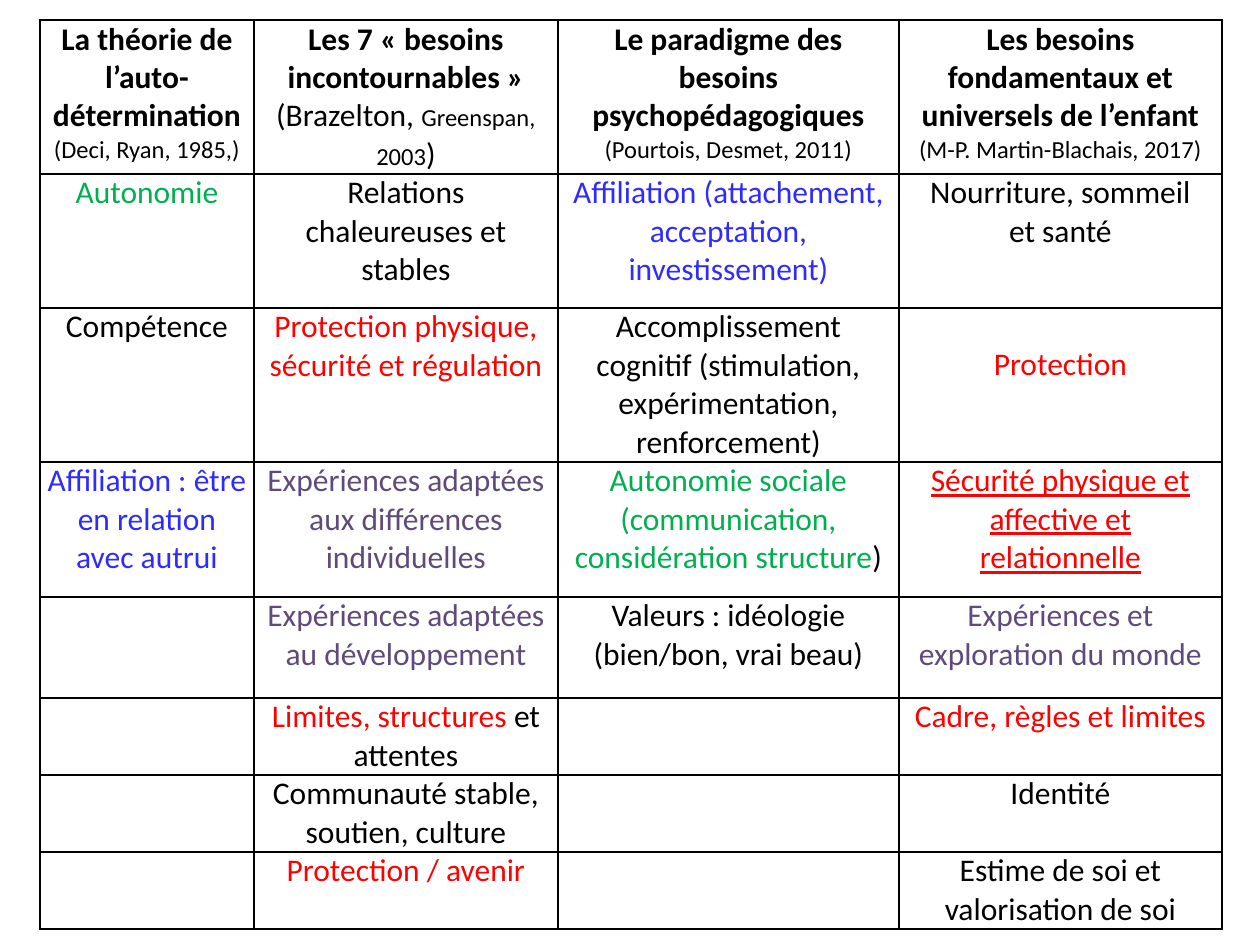
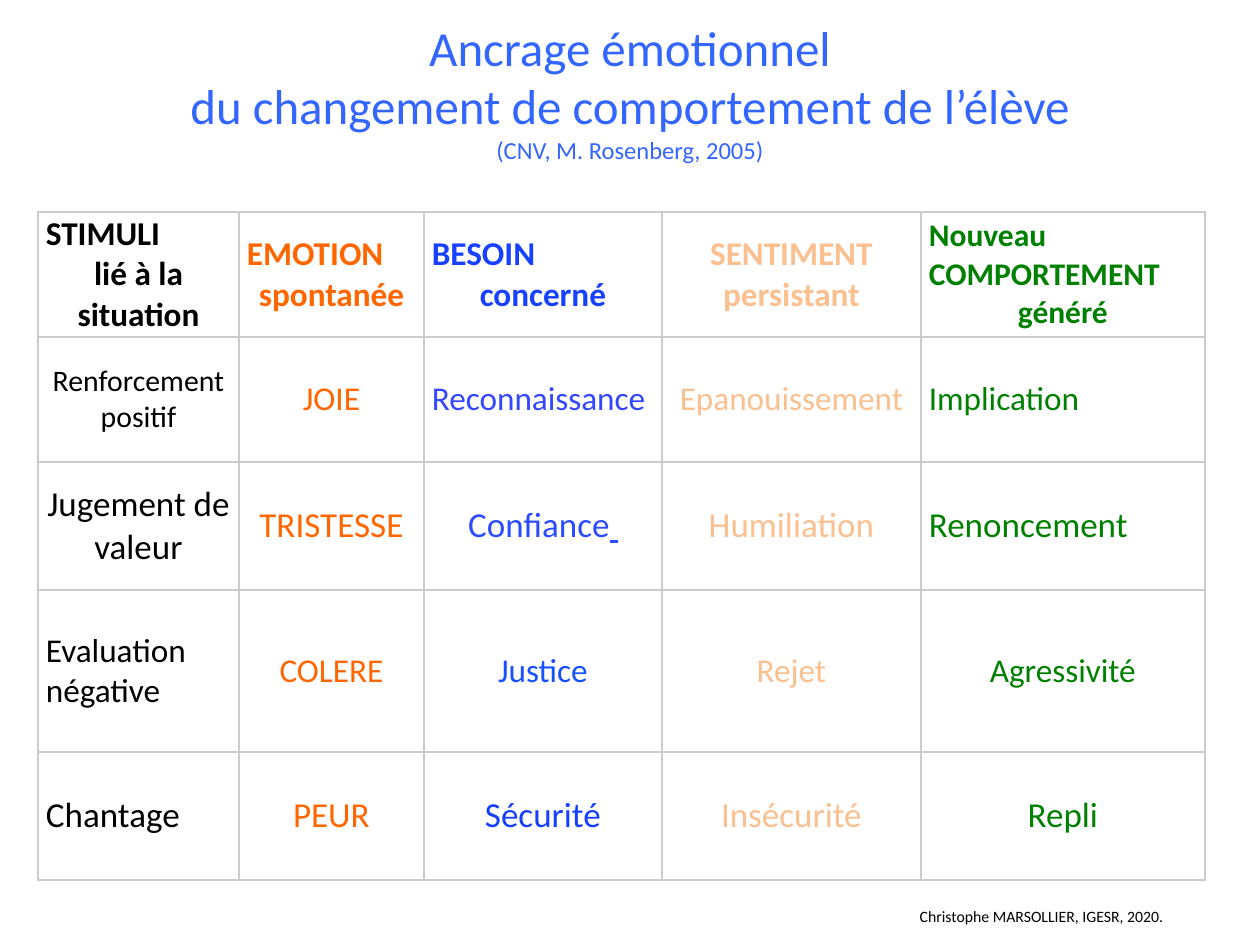
from lxml import etree
from pptx import Presentation
from pptx.dml.color import RGBColor
from pptx.enum import text
from pptx.oxml import ns
from pptx.util import Emu, Pt

PIXELS_PER_INCH = 126
SCALE = 914400 / PIXELS_PER_INCH
FONT = "Calibri"

BLACK = RGBColor(0x00, 0x00, 0x00)
AUTONOMY_GREEN = RGBColor(0x00, 0xB0, 0x50)
AFFILIATION_BLUE = RGBColor(0x2E, 0x2B, 0xFF)
SAFETY_RED = RGBColor(0xFF, 0x00, 0x00)
EXPERIENCE_PURPLE = RGBColor(0x60, 0x4A, 0x7B)
TITLE_BLUE = RGBColor(0x33, 0x66, 0xFF)
EMOTION_ORANGE = RGBColor(0xFF, 0x66, 0x00)
FEELING_PEACH = RGBColor(0xFA, 0xC0, 0x90)
BEHAVIOUR_GREEN = RGBColor(0x00, 0x80, 0x00)
NEED_BLUES = [
    RGBColor(0x18, 0x40, 0xFF),
    RGBColor(0x33, 0x47, 0xFF),
    RGBColor(0x2B, 0x4B, 0xFF),
    RGBColor(0x17, 0x51, 0xFF),
    RGBColor(0x15, 0x3F, 0xFB),
]
GRID_GREY = RGBColor(0xCB, 0xCB, 0xCB)

LEFT = text.PP_ALIGN.LEFT
CENTER = text.PP_ALIGN.CENTER
RIGHT = text.PP_ALIGN.RIGHT
TOP = text.MSO_ANCHOR.TOP
MIDDLE = text.MSO_ANCHOR.MIDDLE


def px(length):
    return Emu(round(length * SCALE))


def run(words, color=BLACK, size=18, **styles):
    return words, color, {"name": FONT, "size": Pt(size), "bold": False, **styles}


def line(*runs, align=CENTER):
    return align, runs


def lines(words, color=BLACK, size=18, align=CENTER, **styles):
    return [line(run(part, color, size, **styles), align=align) for part in words.split("\n")]


def heading(title, source):
    return lines(title, bold=True) + lines(source, size=14)


def write(frame, content):
    for index, (align, runs) in enumerate(content):
        paragraph = frame.add_paragraph() if index else frame.paragraphs[0]
        paragraph.alignment = align
        for words, color, styles in runs:
            piece = paragraph.add_run()
            piece.text = words
            piece.font.color.rgb = color
            for name, value in styles.items():
                setattr(piece.font, name, value)


def draw_borders(cell, color):
    properties = cell._tc.get_or_add_tcPr()
    for index, side in enumerate(("lnL", "lnR", "lnT", "lnB")):
        border = etree.Element(ns.qn(f"a:{side}"), w=str(Pt(1)))
        fill = etree.SubElement(border, ns.qn("a:solidFill"))
        etree.SubElement(fill, ns.qn("a:srgbClr"), val=str(color))
        properties.insert(index, border)


def add_grid(slide, left, top, widths, heights, rows, border, anchor, inset):
    frame = slide.shapes.add_table(
        len(heights), len(widths), px(left), px(top), px(sum(widths)), px(sum(heights))
    )
    table = frame.table
    table.first_row = table.horz_banding = False
    for column, width in zip(table.columns, widths):
        column.width = px(width)
    for row, height in zip(table.rows, heights):
        row.height = px(height)
    cell_format = {
        "margin_left": px(inset), "margin_right": px(inset),
        "margin_top": 0, "margin_bottom": 0, "vertical_anchor": anchor,
    }
    for row, contents in zip(table.rows, rows):
        for cell, content in zip(row.cells, contents):
            for name, value in cell_format.items():
                setattr(cell, name, value)
            cell.fill.background()
            draw_borders(cell, border)
            write(cell.text_frame, content)
    return table


def format_frame(frame, anchor):
    settings = {
        "word_wrap": True, "auto_size": text.MSO_AUTO_SIZE.NONE, "vertical_anchor": anchor,
        "margin_left": 0, "margin_right": 0, "margin_top": 0, "margin_bottom": 0,
    }
    for name, value in settings.items():
        setattr(frame, name, value)


def set_title(slide, left, top, width, height, content):
    title = slide.shapes.title
    title.left, title.top, title.width, title.height = map(px, (left, top, width, height))
    format_frame(title.text_frame, TOP)
    write(title.text_frame, content)


def add_credit(slide, left, top, width, height, words):
    frame = slide.shapes.add_textbox(*map(px, (left, top, width, height))).text_frame
    format_frame(frame, MIDDLE)
    write(frame, lines(words, size=9, align=RIGHT))


def build_needs_slide(presentation):
    slide = presentation.slides.add_slide(presentation.slide_layouts[6])
    empty = []
    brazelton = lines("Les 7 « besoins incontournables »", bold=True) + [
        line(run("(Brazelton, "), run("Greenspan, 2003", size=14), run(")"))
    ]
    rows = [
        [
            heading("La théorie de l’auto-détermination", "(Deci, Ryan, 1985,)"),
            brazelton,
            heading("Le paradigme des besoins psychopédagogiques", "(Pourtois, Desmet, 2011)"),
            heading("Les besoins fondamentaux et universels de l’enfant",
                    "(M-P. Martin-Blachais, 2017)"),
        ],
        [
            lines("Autonomie", AUTONOMY_GREEN),
            lines("Relations chaleureuses et stables"),
            lines("Affiliation (attachement, acceptation, investissement)", AFFILIATION_BLUE),
            lines("Nourriture, sommeil\net santé"),
        ],
        [
            lines("Compétence"),
            lines("Protection physique, sécurité et régulation", SAFETY_RED),
            lines("Accomplissement cognitif (stimulation, expérimentation, renforcement)"),
            lines("Protection", SAFETY_RED),
        ],
        [
            lines("Affiliation : être en relation avec autrui", AFFILIATION_BLUE),
            lines("Expériences adaptées aux différences individuelles", EXPERIENCE_PURPLE),
            [line(run("Autonomie sociale (communication, considération structure",
                      AUTONOMY_GREEN), run(")"))],
            lines("Sécurité physique et affective et relationnelle", SAFETY_RED, underline=True),
        ],
        [
            empty,
            lines("Expériences adaptées au développement", EXPERIENCE_PURPLE),
            lines("Valeurs : idéologie (bien/bon, vrai beau)"),
            lines("Expériences et\nexploration du monde", EXPERIENCE_PURPLE),
        ],
        [
            empty,
            [line(run("Limites, structures ", SAFETY_RED), run("et attentes"))],
            empty,
            lines("Cadre, règles et limites", SAFETY_RED),
        ],
        [empty, lines("Communauté stable, soutien, culture"), empty, lines("Identité")],
        [
            empty,
            lines("Protection / avenir", SAFETY_RED),
            empty,
            lines("Estime de soi et valorisation de soi"),
        ],
    ]
    table = add_grid(
        slide, 40, 20, [214, 304, 341, 323], [154, 134, 154, 135, 101, 77, 77, 77],
        rows, BLACK, TOP, 7,
    )
    table.cell(2, 3).margin_top = px(38)


def build_emotion_slide(presentation):
    slide = presentation.slides.add_slide(presentation.slide_layouts[5])
    set_title(
        slide, 63, 17, 1134, 158,
        lines("Ancrage émotionnel\ndu changement de comportement de l’élève", TITLE_BLUE, 28)
        + lines("(CNV, M. Rosenberg, 2005)", TITLE_BLUE, 14),
    )

    def header(first, second, color, size=19, align=LEFT):
        return (lines(first, color, size, align, bold=True)
                + lines(second, color, size, bold=True))

    rows = [[
        header("STIMULI", "lié à la situation", BLACK),
        header("EMOTION", "spontanée", EMOTION_ORANGE),
        header("BESOIN", "concerné", NEED_BLUES[0]),
        header("SENTIMENT", "persistant", FEELING_PEACH, align=CENTER),
        header("Nouveau COMPORTEMENT", "généré", BEHAVIOUR_GREEN, 18),
    ]]
    reactions = [
        (19, "Renforcement positif", "JOIE", "Reconnaissance", "Epanouissement", "Implication"),
        (20, "Jugement de valeur", "TRISTESSE", "Confiance", "Humiliation", "Renoncement"),
        (19, "Evaluation\nnégative", "COLERE", "Justice", "Rejet", "Agressivité"),
        (20, "Chantage", "PEUR", "Sécurité", "Insécurité", "Repli"),
    ]
    left_aligned = {"Reconnaissance", "Implication", "Renoncement", "Evaluation\nnégative", "Chantage"}
    special_sizes = {"Renforcement positif": 17}
    for need_blue, (size, *words) in zip(NEED_BLUES[1:], reactions):
        colors = [BLACK, EMOTION_ORANGE, need_blue, FEELING_PEACH, BEHAVIOUR_GREEN]
        rows.append([
            lines(word, color, special_sizes.get(word, size),
                  LEFT if word in left_aligned else CENTER)
            for word, color in zip(words, colors)
        ])
    confidence_blue = NEED_BLUES[2]
    rows[2][2] = [line(
        run("Confiance", confidence_blue, 20),
        run(" ", confidence_blue, 20, bold=True, underline=True),
    )]
    add_grid(
        slide, 38, 212, [201, 185, 238, 259, 284], [125, 125, 128, 162, 128],
        rows, GRID_GREY, MIDDLE, 8,
    )
    add_credit(slide, 577, 900, 586, 32, "Christophe MARSOLLIER, IGESR, 2020.")


def main():
    presentation = Presentation()
    presentation.slide_width, presentation.slide_height = px(1260), px(945)
    build_needs_slide(presentation)
    build_emotion_slide(presentation)
    presentation.save("out.pptx")


if __name__ == "__main__":
    main()
